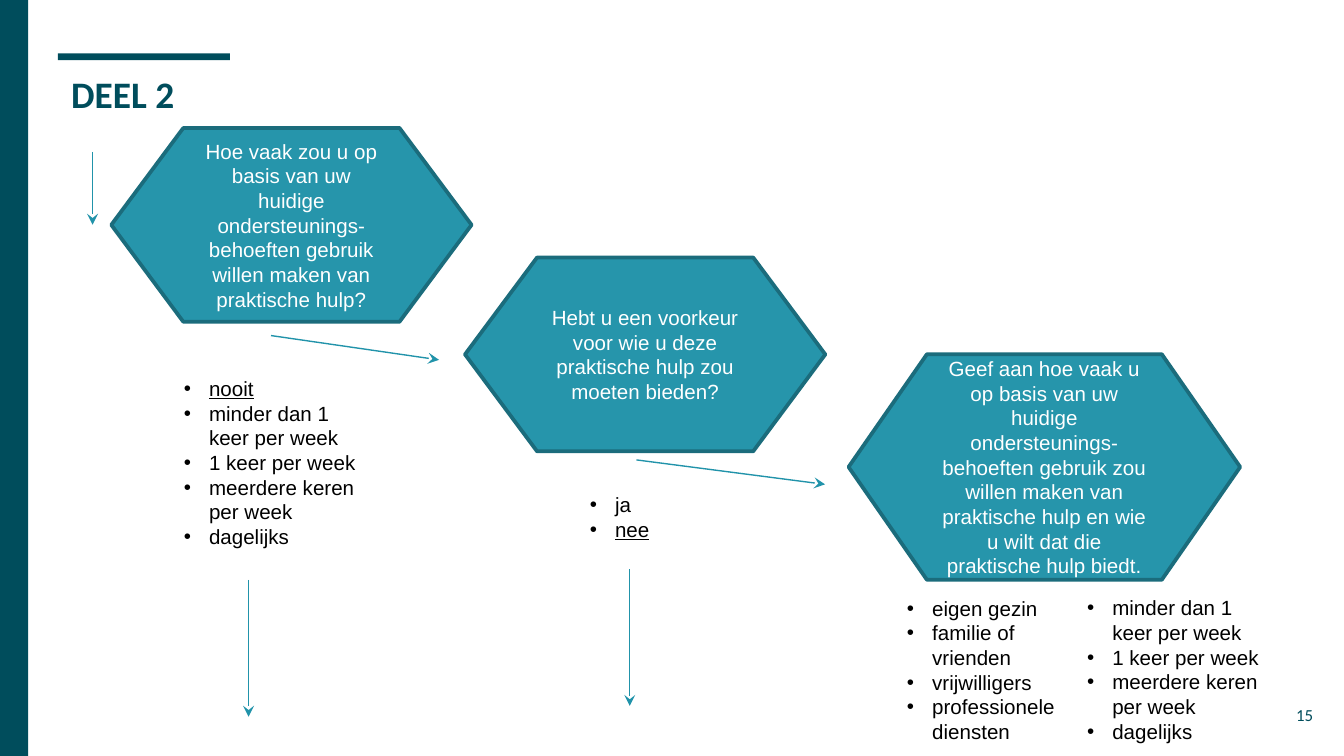
"""Build the "DEEL 2" slide: three linked survey questions with their answers."""
from dataclasses import dataclass

import lxml.etree
import pptx
import pptx.dml.color
import pptx.enum.shapes
import pptx.enum.text
import pptx.oxml.ns
import pptx.slide
import pptx.text.text
import pptx.util

Pt = pptx.util.Pt
Align = pptx.enum.text.PP_ALIGN
Anchor = pptx.enum.text.MSO_ANCHOR
Preset = pptx.enum.shapes.MSO_SHAPE
Color = pptx.dml.color.RGBColor

PETROL = Color(0x00, 0x4D, 0x5C)
TEAL = Color(0x26, 0x95, 0xAB)
TEAL_EDGE = Color(0x1B, 0x6C, 0x7C)
ARROW = Color(0x21, 0x93, 0xAA)
WHITE = Color(0xFF, 0xFF, 0xFF)
BLACK = Color(0x00, 0x00, 0x00)

INSET = 7.2
HALF_INSET = 3.6
BULLET_INDENT = 13.5
ANSWERS_WIDTH = 107.3


@dataclass(frozen=True)
class Box:
    left: float
    top: float
    width: float
    height: float

    def lengths(self) -> tuple[Pt, Pt, Pt, Pt]:
        return Pt(self.left), Pt(self.top), Pt(self.width), Pt(self.height)


@dataclass(frozen=True)
class Style:
    size: float
    font: str
    color: Color
    bold: bool = False


@dataclass(frozen=True)
class Question:
    box: Box
    lines: tuple[str, ...]


@dataclass(frozen=True)
class Answers:
    left: float
    top: float
    height: float
    options: tuple[str, ...]
    underlined: str = ""


@dataclass(frozen=True)
class Arrow:
    x1: float
    y1: float
    x2: float
    y2: float


TITLE_STYLE = Style(20, "Calibri", PETROL, bold=True)
NUMBER_STYLE = Style(9, "Calibri", PETROL)
QUESTION_STYLE = Style(11, "Arial", WHITE)
ANSWER_STYLE = Style(11, "Arial", BLACK)

ACCENTS = (Box(31, 28.6, 92.2, 3.6), Box(0, 0, 15.1, 405))

QUESTIONS = (
    Question(Box(59.6, 68.6, 193, 103.8), (
        "Hoe vaak zou u op basis van uw huidige ondersteunings-",
        "behoeften gebruik willen maken van praktische hulp?")),
    Question(Box(249.1, 138, 193, 103.8), (
        "Hebt u een voorkeur voor wie u deze praktische hulp zou moeten bieden?",)),
    Question(Box(454.6, 189.8, 209.8, 120.8), (
        "Geef aan hoe vaak u op basis van uw huidige ondersteunings-",
        "behoeften gebruik zou willen maken van praktische hulp en wie u wilt "
        "dat die praktische hulp biedt.")),
)

FREQUENCIES = ("minder dan 1 keer per week", "1 keer per week",
               "meerdere keren per week", "dagelijks")

ANSWER_LISTS = (
    Answers(91.4, 198, 100.8, ("nooit",) + FREQUENCIES, "nooit"),
    Answers(308.9, 260.2, 33.8, ("ja", "nee"), "nee"),
    Answers(478.8, 315.6, 87.1, ("eigen gezin", "familie of vrienden",
                                 "vrijwilligers", "professionele diensten")),
    Answers(575.3, 315.4, 87.1, FREQUENCIES),
)

ARROWS = (
    Arrow(49.6, 81.4, 49.6, 120.4),
    Arrow(145.2, 179.8, 235.2, 192.8),
    Arrow(341, 246.4, 442, 259.5),
    Arrow(133.2, 310.6, 133.2, 384),
    Arrow(337.4, 305, 337.4, 378.2),
)


def add_run(paragraph: pptx.text.text._Paragraph, text: str, style: Style,
            underline: bool = False) -> None:
    run = paragraph.add_run()
    run.text = text
    run.font.size = Pt(style.size)
    run.font.name = style.font
    run.font.color.rgb = style.color
    run.font.bold = style.bold
    run.font.underline = underline


def set_frame(frame: pptx.text.text.TextFrame, anchor: Anchor, vertical_inset: float) -> None:
    frame.word_wrap = True
    frame.vertical_anchor = anchor
    frame.margin_left = frame.margin_right = Pt(INSET)
    frame.margin_top = frame.margin_bottom = Pt(vertical_inset)


def add_label(slide: pptx.slide.Slide, box: Box, text: str, style: Style,
              align: Align, anchor: Anchor) -> None:
    frame = slide.shapes.add_textbox(*box.lengths()).text_frame
    set_frame(frame, anchor, INSET)
    frame.paragraphs[0].alignment = align
    add_run(frame.paragraphs[0], text, style)


def add_accent(slide: pptx.slide.Slide, box: Box) -> None:
    accent = slide.shapes.add_shape(Preset.RECTANGLE, *box.lengths())
    accent.shadow.inherit = False
    accent.fill.solid()
    accent.fill.fore_color.rgb = PETROL
    accent.line.fill.background()


def add_question(slide: pptx.slide.Slide, question: Question) -> None:
    hexagon = slide.shapes.add_shape(Preset.FLOWCHART_PREPARATION, *question.box.lengths())
    hexagon.shadow.inherit = False
    hexagon.fill.solid()
    hexagon.fill.fore_color.rgb = TEAL
    hexagon.line.color.rgb = TEAL_EDGE
    hexagon.line.width = Pt(2)
    set_frame(hexagon.text_frame, Anchor.MIDDLE, HALF_INSET)
    paragraph = hexagon.text_frame.paragraphs[0]
    paragraph.alignment = Align.CENTER
    for index, line in enumerate(question.lines):
        if index:
            paragraph.add_line_break()
        add_run(paragraph, line, QUESTION_STYLE)


def add_bullet(paragraph: pptx.text.text._Paragraph) -> None:
    qn = pptx.oxml.ns.qn
    properties = paragraph._p.get_or_add_pPr()
    properties.set("marL", str(Pt(BULLET_INDENT)))
    properties.set("indent", str(-Pt(BULLET_INDENT)))
    tint = lxml.etree.SubElement(properties, qn("a:buClr"))
    lxml.etree.SubElement(tint, qn("a:srgbClr"), val=str(BLACK))
    lxml.etree.SubElement(properties, qn("a:buFont"), typeface="Arial")
    lxml.etree.SubElement(properties, qn("a:buChar"), char="•")


def add_answers(slide: pptx.slide.Slide, answers: Answers) -> None:
    box = Box(answers.left, answers.top, ANSWERS_WIDTH, answers.height)
    frame = slide.shapes.add_textbox(*box.lengths()).text_frame
    set_frame(frame, Anchor.TOP, HALF_INSET)
    frame.auto_size = pptx.enum.text.MSO_AUTO_SIZE.SHAPE_TO_FIT_TEXT
    for index, option in enumerate(answers.options):
        paragraph = frame.add_paragraph() if index else frame.paragraphs[0]
        add_bullet(paragraph)
        add_run(paragraph, option, ANSWER_STYLE, option == answers.underlined)


def add_arrow(slide: pptx.slide.Slide, arrow: Arrow) -> None:
    qn = pptx.oxml.ns.qn
    connector = slide.shapes.add_connector(
        pptx.enum.shapes.MSO_CONNECTOR.STRAIGHT,
        Pt(arrow.x1), Pt(arrow.y1), Pt(arrow.x2), Pt(arrow.y2))
    connector.line.color.rgb = ARROW
    connector.line.width = Pt(0.75)
    lxml.etree.SubElement(connector.line._get_or_add_ln(), qn("a:tailEnd"), type="stealth")
    lxml.etree.SubElement(connector._element.spPr, qn("a:effectLst"))


def main() -> None:
    deck = pptx.Presentation()
    deck.slide_width, deck.slide_height = Pt(720), Pt(405)
    slide = deck.slides.add_slide(deck.slide_layouts[6])
    for accent in ACCENTS:
        add_accent(slide, accent)
    add_label(slide, Box(31, 31, 671, 45.4), "DEEL 2", TITLE_STYLE, Align.LEFT, Anchor.TOP)
    add_label(slide, Box(667.4, 367.2, 43.2, 31), "15", NUMBER_STYLE, Align.RIGHT, Anchor.MIDDLE)
    for question in QUESTIONS:
        add_question(slide, question)
    for answers in ANSWER_LISTS:
        add_answers(slide, answers)
    for arrow in ARROWS:
        add_arrow(slide, arrow)
    deck.save("out.pptx")


if __name__ == "__main__":
    main()
